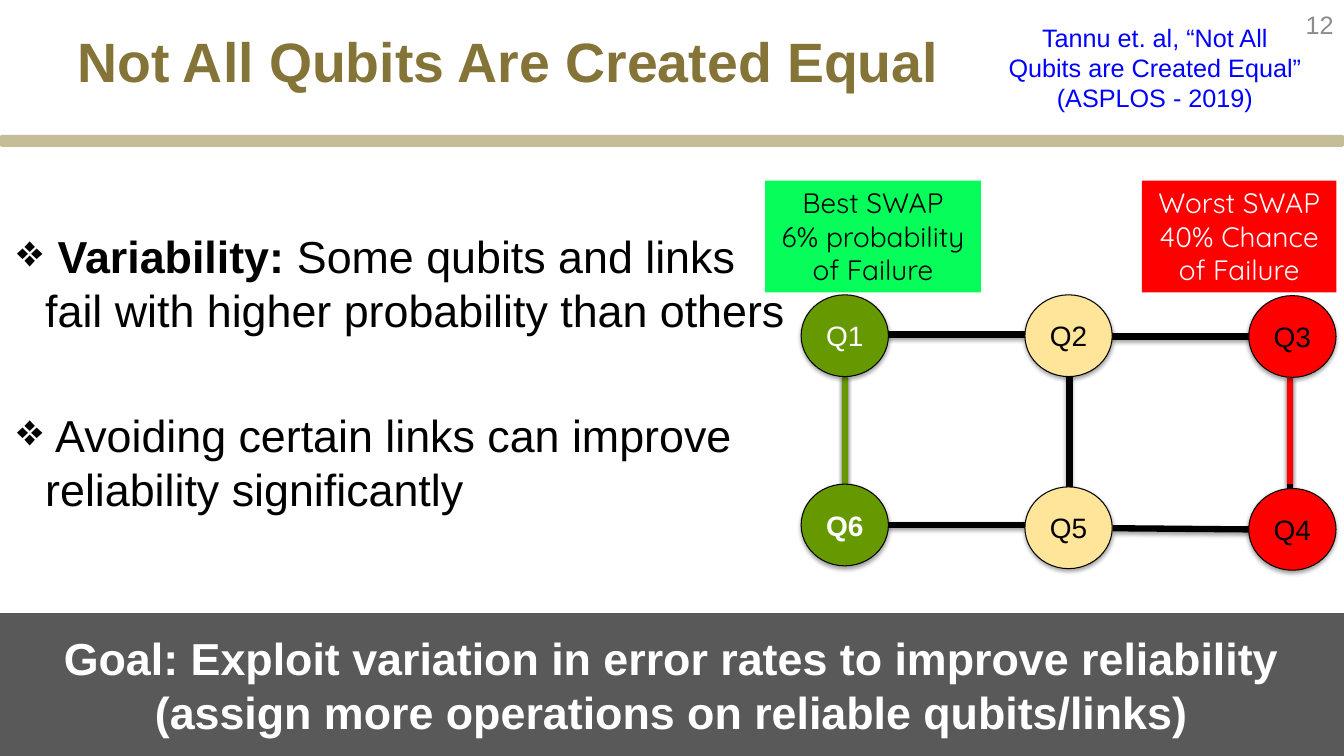
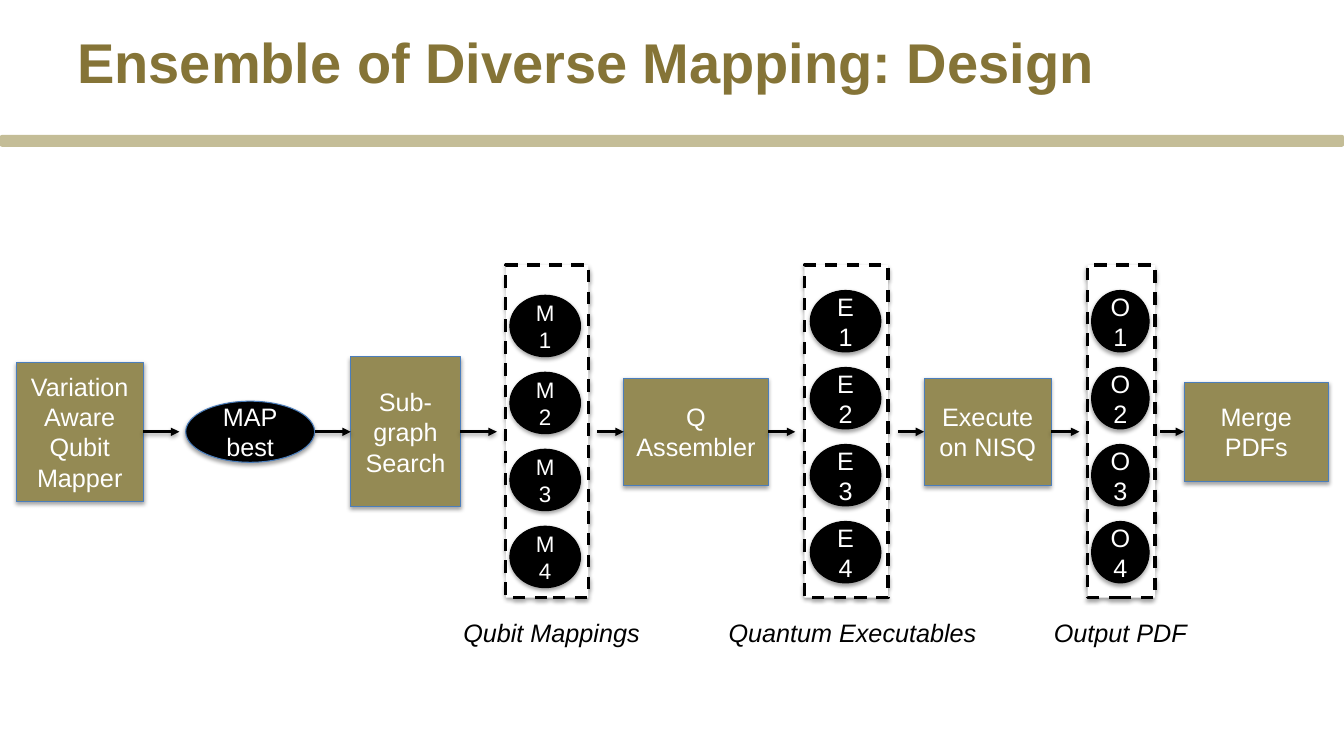
from lxml.etree import SubElement
from pptx import Presentation
from pptx.dml.color import RGBColor
from pptx.enum.dml import MSO_LINE
from pptx.enum.shapes import MSO_CONNECTOR, MSO_SHAPE
from pptx.enum.text import MSO_ANCHOR, PP_ALIGN
from pptx.oxml.ns import qn
from pptx.util import Cm, Pt

HUES = {
    "gold": "857437", "band": "C4BD97", "olive": "948A54", "edge": "4B7EBC",
    "black": "000000", "white": "FFFFFF", "gray": "8C8C8C", "dark": "595959",
    "green": "669900", "lime": "07FD59", "cream": "FEE599", "red": "FF0000",
    "blue": "0000FF",
}
RECT, OVAL = MSO_SHAPE.RECTANGLE, MSO_SHAPE.OVAL
MID, TOP = MSO_ANCHOR.MIDDLE, MSO_ANCHOR.TOP


def put(slide, text, x, y, w, h, kind=RECT, fill=None, line=None, wide=0.75,
        dash=None, shade=False, size=18, font="Arial", hue="black", bold=False,
        slant=False, align=PP_ALIGN.CENTER, anchor=MID, wrap=True,
        bullet=None, gap=0, lead=""):
    box = Cm(x), Cm(y), Cm(w), Cm(h)
    if fill:
        shape = slide.shapes.add_shape(kind, *box)
        shape.shadow.inherit = False
        shape.fill.solid()
        shape.fill.fore_color.rgb = RGBColor.from_string(HUES[fill])
        if line:
            shape.line.color.rgb = RGBColor.from_string(HUES[line])
            shape.line.width = Pt(wide)
            shape.line.dash_style = dash
        else:
            shape.line.fill.background()
    else:
        shape = slide.shapes.add_textbox(*box)
    if shade:
        cast(shape._element.spPr.find(qn("a:effectLst")))
    frame = shape.text_frame
    frame.word_wrap = wrap
    frame.vertical_anchor = anchor
    for i, row in enumerate(text.split("\n") if text else []):
        para = frame.add_paragraph() if i else frame.paragraphs[0]
        para.alignment = align
        if i and gap:
            para.space_before = Pt(gap)
        if bullet:
            props = para._p.get_or_add_pPr()
            props.set("marL", str(Cm(0.71)))
            props.set("indent", str(-Cm(0.71)))
            SubElement(props, qn("a:buChar"), char=bullet)
        head = lead if lead and row.startswith(lead) else ""
        for part, heavy in ((head, True), (row[len(head):], bold)):
            if part:
                run = para.add_run()
                run.text = part
                run.font.name = font
                run.font.size = Pt(size)
                run.font.bold = heavy
                run.font.italic = slant
                run.font.color.rgb = RGBColor.from_string(HUES[hue])
    return shape


def cast(effects):
    glow = SubElement(effects, qn("a:outerShdw"), blurRad=str(Pt(3.1)),
                      dist=str(Pt(1.7)), dir="5400000", rotWithShape="0")
    tint = SubElement(glow, qn("a:srgbClr"), val=HUES["black"])
    SubElement(tint, qn("a:alpha"), val="36000")


deck = Presentation()
deck.slide_width, deck.slide_height = Cm(33.87), Cm(19.05)
slides = []
for title, size in (("Not All Qubits Are Created Equal", 39.6),
                    ("Ensemble of Diverse Mapping: Design", 40)):
    slide = deck.slides.add_slide(deck.slide_layouts[6])
    put(slide, "", 0, 3.4, 33.87, 0.3, kind=MSO_SHAPE.ROUNDED_RECTANGLE, fill="band")
    put(slide, title, 1.7, 0.56, 26.24, 3.18, size=size, hue="gold", bold=True,
        align=PP_ALIGN.LEFT, anchor=TOP)
    slides.append(slide)
equal, design = slides

put(equal, "12", 29.49, 0, 4.37, 1.22, hue="gray", align=PP_ALIGN.RIGHT)
put(equal, "Tannu et. al, “Not All Qubits are Created Equal” (ASPLOS - 2019)",
    25.04, 0.43, 8.13, 2.57, hue="blue", anchor=TOP)
put(equal, " Variability: Some qubits and links fail with higher probability than others\n"
    " Avoiding certain links can improve reliability significantly",
    0.18, 5.64, 20, 8, size=32, align=PP_ALIGN.LEFT, anchor=TOP,
    bullet="❖", gap=51, lead=" Variability:")

wires = []
for x1, y1, x2, y2, hue in (
        (22.37, 8.43, 25.83, 8.43, "black"), (28.02, 8.48, 31.47, 8.48, "black"),
        (22.37, 13.23, 25.83, 13.23, "black"), (28.04, 13.31, 31.47, 13.34, "black"),
        (21.29, 9.47, 21.29, 12.29, "black"), (21.29, 9.47, 21.29, 12.19, "green"),
        (26.95, 9.45, 26.95, 12.27, "black"),
        (32.51, 9.52, 32.51, 12.34, "black"), (32.51, 9.52, 32.51, 12.19, "red")):
    wire = equal.shapes.add_connector(MSO_CONNECTOR.STRAIGHT, Cm(x1), Cm(y1), Cm(x2), Cm(y2))
    wires.append((wire, hue, 4.5))

for name, col, y, fill, hue in (
        ("Q1", 0, 7.43, "green", "white"), ("Q2", 1, 7.43, "cream", "black"),
        ("Q3", 2, 7.45, "red", "black"), ("Q6", 0, 12.2, "green", "white"),
        ("Q5", 1, 12.27, "cream", "black"), ("Q4", 2, 12.31, "red", "black")):
    put(equal, name, 20.19 + 5.64 * col, y, 2.2, 2.06, kind=OVAL, fill=fill,
        line="black", shade=True, size=20, hue=hue, bold=name == "Q6")

for text, x, w, fill, hue in (
        ("Worst SWAP 40% Chance of Failure", 28.78, 4.9, "red", "white"),
        ("Best SWAP\n6% probability of Failure", 19.28, 5.44, "lime", "black")):
    put(equal, text, x, 4.55, w, 2.82, fill=fill, size=20, font="Quicksand",
        hue=hue, anchor=TOP)
put(equal, "Goal: Exploit variation in error rates to improve reliability\n"
    "(assign more operations on reliable qubits/links)",
    0, 15.45, 33.87, 3.6, fill="dark", size=32, hue="white", bold=True)

axis = 10.88
steps = []
for text, x, w, h in (
        ("Variation Aware\nQubit Mapper", 0.41, 3.2, 3.5),
        ("Sub-graph\nSearch", 8.84, 2.76, 3.78),
        ("Q\nAssembler", 15.72, 3.64, 2.7),
        ("Execute on NISQ", 23.29, 3.2, 2.7),
        ("Merge\nPDFs", 29.84, 3.64, 2.5)):
    steps.append(put(design, text, x, axis - h / 2, w, h, fill="olive",
                     line="edge", shade=True, hue="white"))
put(design, "MAP\nbest", 4.68, axis - 0.77, 3.25, 1.54, kind=OVAL, fill="black",
    line="edge", shade=True, hue="white")

for mark, x, w, left, top, wide, size in (
        ("M", 12.75, 2.08, 12.85, 7.44, 1.78, 16),
        ("E", 20.27, 2.11, 20.42, 7.32, 1.78, 18),
        ("O", 27.41, 1.7, 27.51, 7.32, 1.45, 18)):
    put(design, "", x, 6.68, w, 8.38, fill="white", line="black", wide=2.25,
        dash=MSO_LINE.DASH, shade=True)
    for i in range(4):
        put(design, f"{mark} {i + 1}", left, top + 1.94 * i, wide, 1.55, kind=OVAL,
            fill="black", line="black", shade=True, size=size, hue="white")

for text, x, w in (("Qubit Mappings", 11.4, 5), ("Quantum Executables", 18.08, 6.81),
                   ("Output PDF", 26.29, 3.89)):
    put(design, text, x, 15.44, w, 1.02, slant=True, anchor=TOP, wrap=False)

stops = (4.52, 12.52, 20.04, 27.2)
starts = (7.95, 15.04, 22.63, 29.24)
for i in range(4):
    out = design.shapes.add_connector(MSO_CONNECTOR.STRAIGHT, 0, Cm(axis), Cm(stops[i]), Cm(axis))
    out.begin_connect(steps[i], 3)
    into = design.shapes.add_connector(MSO_CONNECTOR.STRAIGHT, Cm(starts[i]), Cm(axis), 0, Cm(axis))
    into.end_connect(steps[i + 1], 1)
    wires += [(out, "black", 2), (into, "black", 2)]

for wire, hue, width in wires:
    wire.line.color.rgb = RGBColor.from_string(HUES[hue])
    wire.line.width = Pt(width)
    if width == 2:
        SubElement(wire.line._get_or_add_ln(), qn("a:tailEnd"), type="triangle")
    cast(SubElement(wire._element.spPr, qn("a:effectLst")))

deck.save("out.pptx")
